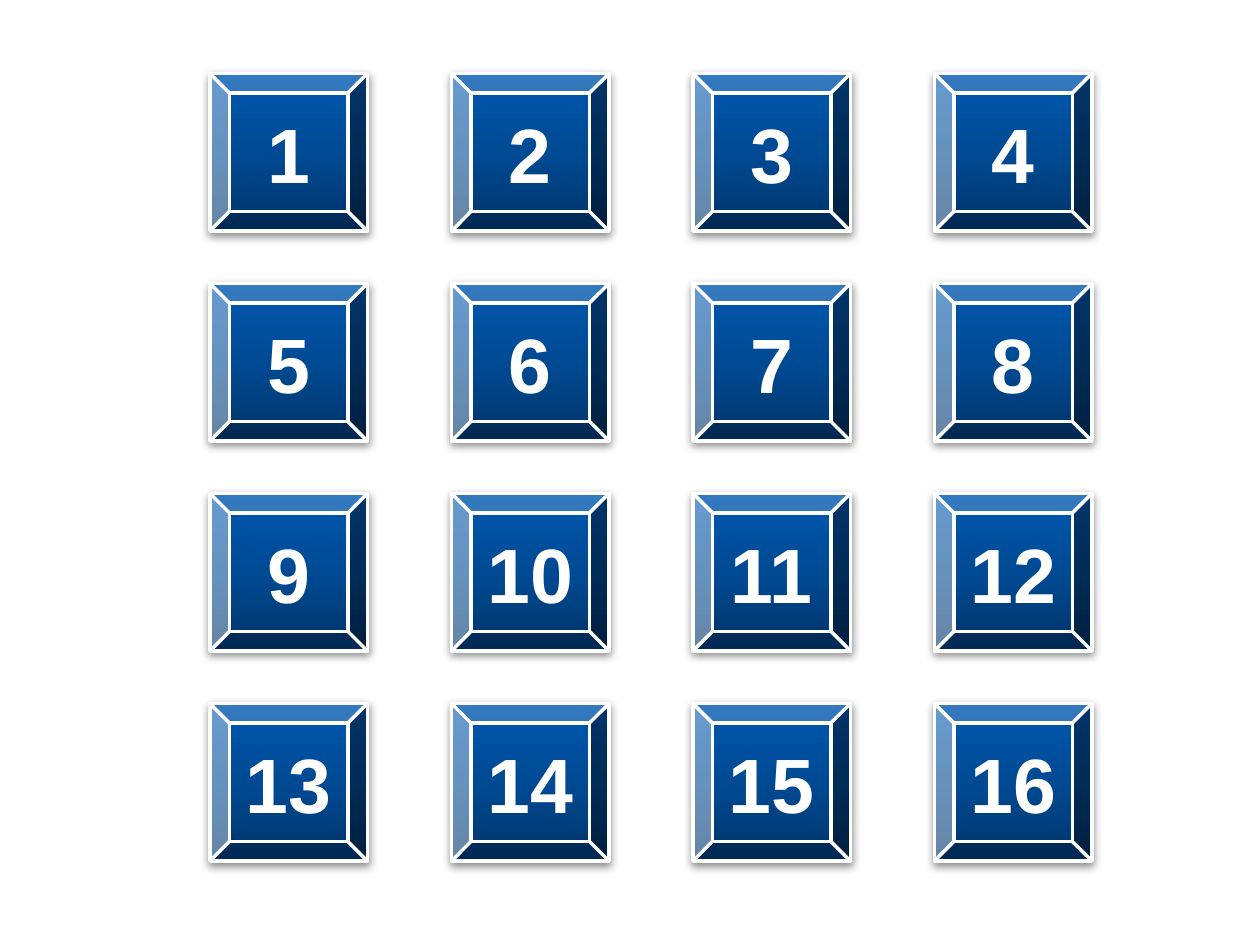
from copy import deepcopy
from dataclasses import dataclass

from lxml.etree import SubElement
from pptx import Presentation
from pptx.dml.color import RGBColor
from pptx.enum.shapes import MSO_SHAPE
from pptx.enum.text import MSO_ANCHOR, PP_ALIGN
from pptx.oxml.ns import qn
from pptx.util import Pt


@dataclass(frozen=True)
class Theme:
    font: str = "Arial"
    number_size: int = 44
    white: str = "FFFFFF"
    shadow: str = "000000"
    gradient: tuple = ((0, "003468"), (0.5, "004A94"), (1, "0058B0"))


THEME = Theme()

# Grid of buttons, in points
COLUMNS, ROWS = 4, 4
LEFT, TOP = 120, 42
COLUMN_STEP, ROW_STEP = 138, 120
BUTTON_SIZE = 90


def fill_gradient(shape):
    """Fill from dark at the bottom to light at the top."""
    shape.fill.gradient()
    shape.fill.gradient_angle = 90
    # The default gradient has two stops; add a third
    stop_list = shape.fill._xPr.find(".//" + qn("a:gsLst"))
    stop_list.append(deepcopy(stop_list[0]))
    for stop, (position, color) in zip(shape.fill.gradient_stops, THEME.gradient):
        stop.position = position
        stop.color.rgb = RGBColor.from_string(color)


def add_shadow(shape):
    """Add a soft shadow straight below the shape."""
    shape.shadow.inherit = False
    effects = shape._element.spPr.find(qn("a:effectLst"))
    shadow = SubElement(effects, qn("a:outerShdw"), blurRad=str(Pt(5)),
                        dist=str(Pt(2)), dir="5400000", rotWithShape="0")
    color = SubElement(shadow, qn("a:srgbClr"), val=THEME.shadow)
    SubElement(color, qn("a:alpha"), val="43000")


def add_number(shape, number):
    frame = shape.text_frame
    frame.text = str(number)
    frame.vertical_anchor = MSO_ANCHOR.MIDDLE
    para = frame.paragraphs[0]
    para.alignment = PP_ALIGN.CENTER
    font = para.runs[0].font
    font.name = THEME.font
    font.size = Pt(THEME.number_size)
    font.bold = True
    font.color.rgb = RGBColor.from_string(THEME.white)


def add_button(page, number, left, top):
    button = page.shapes.add_shape(MSO_SHAPE.BEVEL, Pt(left), Pt(top),
                                   Pt(BUTTON_SIZE), Pt(BUTTON_SIZE))
    fill_gradient(button)
    button.line.color.rgb = RGBColor.from_string(THEME.white)
    button.line.width = Pt(2)
    add_shadow(button)
    add_number(button, number)


def main():
    deck = Presentation()
    deck.slide_width, deck.slide_height = Pt(720), Pt(540)
    page = deck.slides.add_slide(deck.slide_layouts[6])

    # Numbered buttons, row by row
    for index in range(ROWS * COLUMNS):
        row, column = divmod(index, COLUMNS)
        add_button(page, index + 1, LEFT + column * COLUMN_STEP, TOP + row * ROW_STEP)

    deck.save("out.pptx")


if __name__ == "__main__":
    main()
